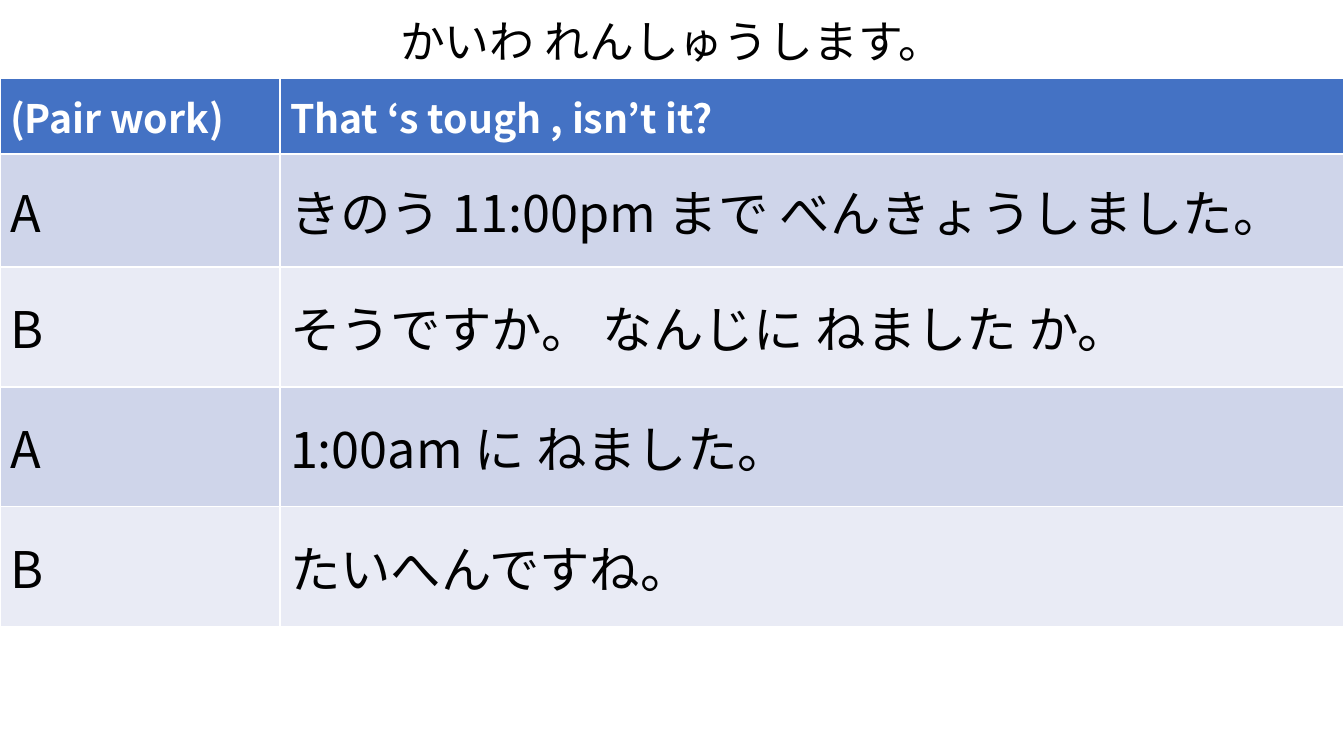
from pptx import Presentation
from pptx.dml.color import RGBColor
from pptx.enum.text import MSO_ANCHOR as Anchor, PP_ALIGN as Align
from pptx.oxml.ns import qn
from pptx.util import Pt
from lxml import etree

PX = 914400 / 100.8
FONT = "Noto Sans CJK JP"
DIALOGUE = [
    ("(Pair work)", "That ‘s tough , isn’t it?"),
    ("A", "きのう 11:00pm まで べんきょうしました。"),
    ("B", "そうですか。 なんじに ねました か。"),
    ("A", "1:00am に ねました。"),
    ("B", "たいへんですね。"),
]
COLUMN_WIDTHS = [280, 1064]
ROW_HEIGHTS = [76, 113, 120, 120, 120]


def px(n):
    return round(n * PX)


def rgb(code):
    return RGBColor.from_string(code)


def style(p, size, color, bold=False):
    font = p.font
    font.name, font.size, font.bold = FONT, Pt(size), bold
    font.color.rgb = rgb(color)
    ea = etree.SubElement(p._p.pPr.find(qn("a:defRPr")), qn("a:ea"))
    ea.set("typeface", FONT)


def add_title(slide, x, y, w, h):
    title = slide.shapes.title
    title.left, title.top, title.width, title.height = map(px, (x, y, w, h))
    tf = title.text_frame
    tf.text = "かいわ れんしゅうします。"
    tf.margin_top = tf.margin_bottom = 0
    tf.vertical_anchor = Anchor.MIDDLE
    p = tf.paragraphs[0]
    p.alignment = Align.CENTER
    p.line_spacing = 0.9
    style(p, 32, "000000")


def add_dialogue(slide, x, y, w, h):
    table = slide.shapes.add_table(
        len(DIALOGUE), len(COLUMN_WIDTHS), *map(px, (x, y, w, h))).table
    for column, width in zip(table.columns, COLUMN_WIDTHS):
        column.width = px(width)
    for i, (row, height, texts) in enumerate(zip(table.rows, ROW_HEIGHTS, DIALOGUE)):
        row.height = px(height)
        header = i == 0
        fill = "4472C4" if header else ("E9EBF5", "CFD5EA")[i % 2]
        for cell, text in zip(row.cells, texts):
            cell.text = text
            cell.vertical_anchor = Anchor.MIDDLE
            cell.fill.solid()
            cell.fill.fore_color.rgb = rgb(fill)
            style(cell.text_frame.paragraphs[0], 28 if header else 36,
                  "FFFFFF" if header else "000000", header)


def main():
    prs = Presentation()
    prs.slide_width, prs.slide_height = px(1344), px(756)
    slide = prs.slides.add_slide(prs.slide_layouts[5])
    add_title(slide, 0, 10, 1344, 68)
    add_dialogue(slide, 0, 78, sum(COLUMN_WIDTHS), sum(ROW_HEIGHTS))
    prs.save("out.pptx")


if __name__ == "__main__":
    main()
